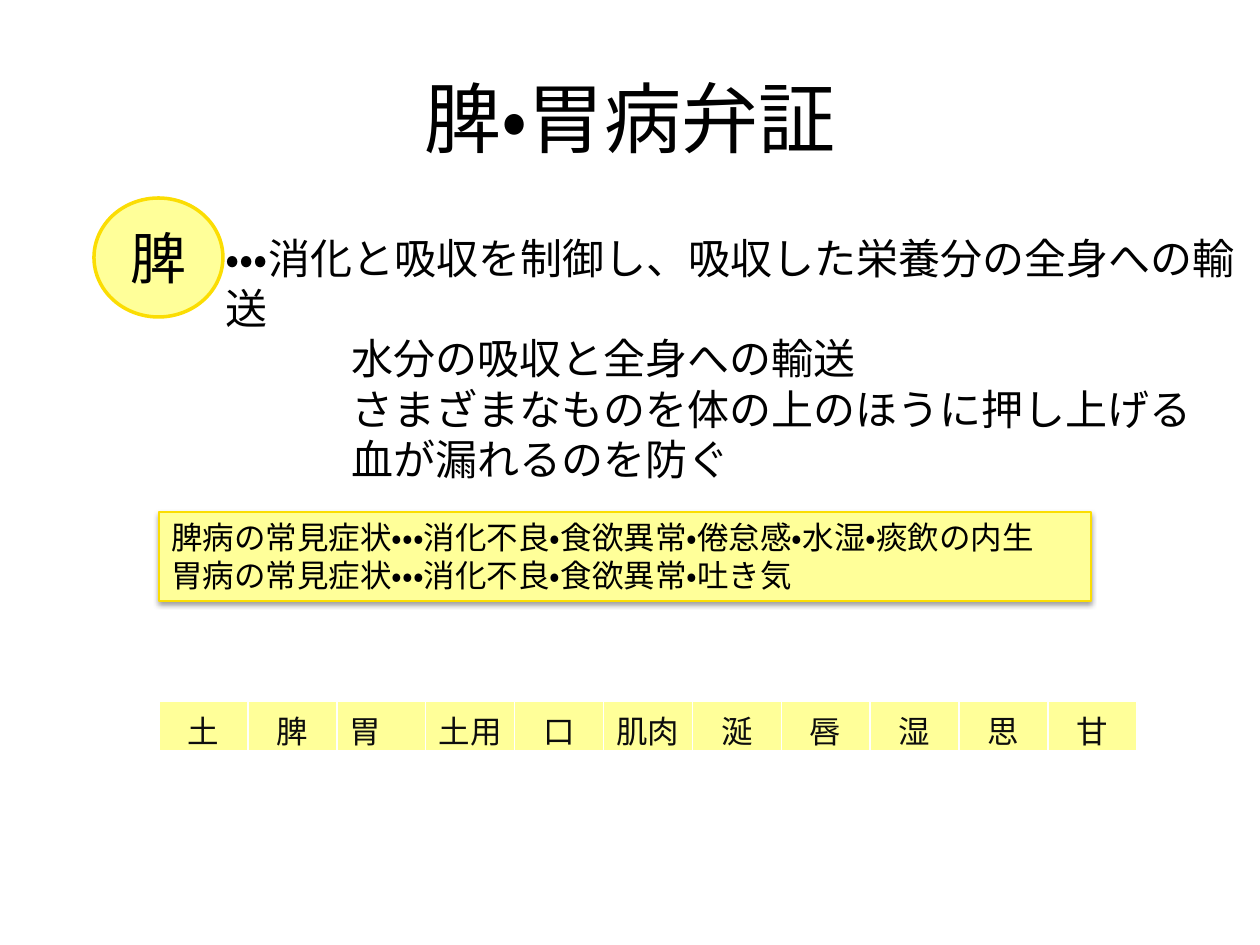
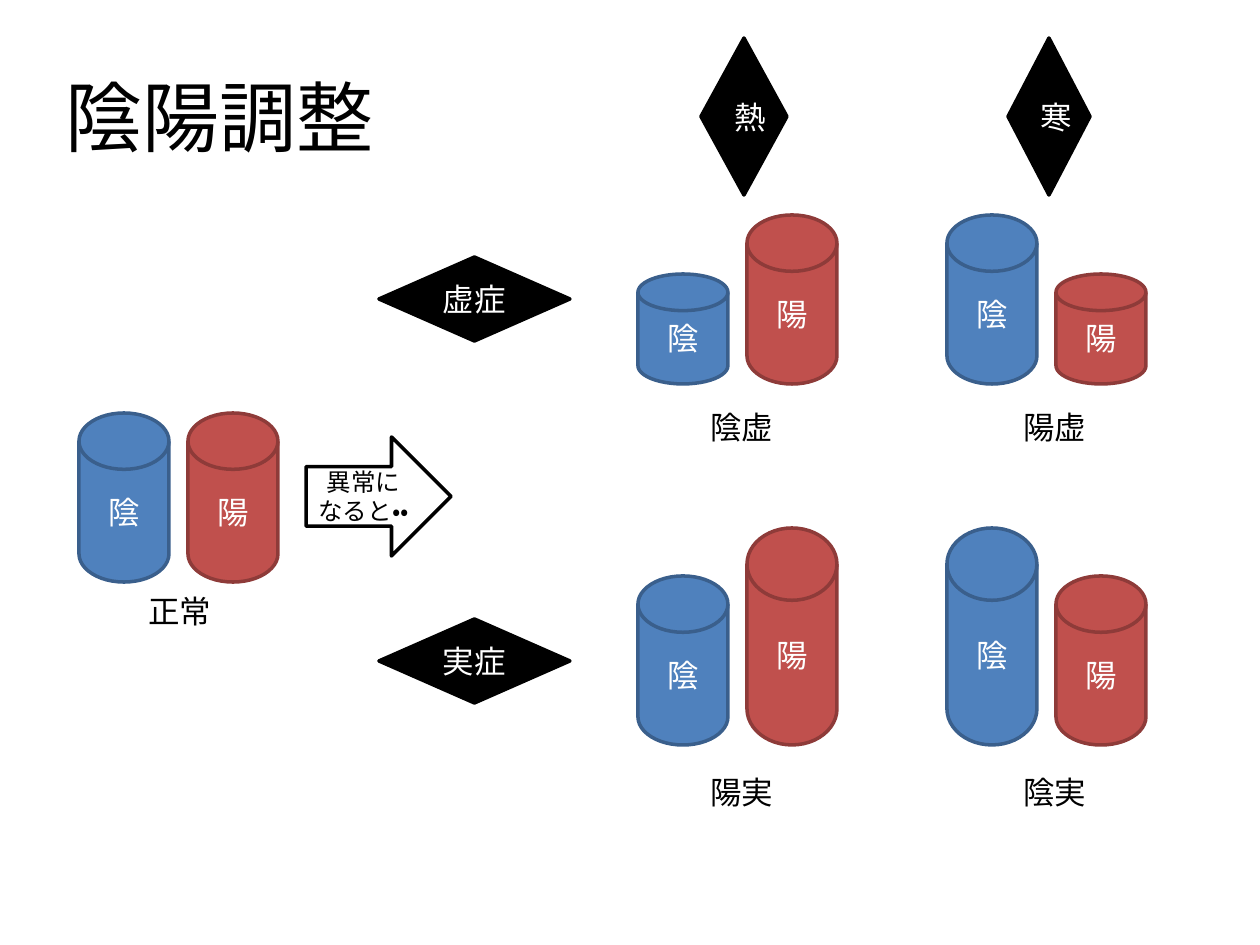
from lxml.etree import SubElement
from pptx import Presentation
from pptx.dml.color import RGBColor
from pptx.enum.lang import MSO_LANGUAGE_ID as Language
from pptx.enum.shapes import MSO_SHAPE as Shape
from pptx.enum.text import MSO_ANCHOR as Anchor, MSO_AUTO_SIZE as AutoSize, PP_ALIGN as Align
from pptx.oxml.ns import qn
from pptx.util import Pt

EMU_PER_PX = 914400 / 126
COLORS = {
    "black": "000000", "white": "FFFFFF", "ink": "0D0D0D",
    "earth": "FFFF99", "earth_line": "FBDD03",
    "yin": "4F81BD", "yin_line": "3A5F8C",
    "yang": "C0504D", "yang_line": "8E3B39",
}
DISK_WIDTH = 90
DISK_PITCH = 109


def emu(*lengths):
    return [round(length * EMU_PER_PX) for length in lengths]


def rgb(name):
    return RGBColor.from_string(COLORS[name])


class Deck:
    font = "Calibri"

    def __init__(self):
        self.presentation = Presentation()
        self.presentation.slide_width, self.presentation.slide_height = emu(1260, 945)
        self.slide = None

    def add_slide(self):
        self.slide = self.presentation.slides.add_slide(self.presentation.slide_layouts[6])

    def add_lines(self, frame, lines, size, color="black", align=Align.LEFT, indent=0):
        for index, line in enumerate(lines):
            paragraph = frame.paragraphs[0] if index == 0 else frame.add_paragraph()
            paragraph.alignment = align
            if index and indent:
                properties = paragraph._p.get_or_add_pPr()
                properties.set("marL", str(emu(indent)[0]))
                properties.set("indent", "0")
            run = paragraph.add_run()
            run.text = line
            run.font.name = self.font
            run.font.size = Pt(size)
            run.font.color.rgb = rgb(color)
            run.font.language_id = Language.JAPANESE

    def text(self, box, lines, size=18, wrap=True, indent=0):
        frame = self.slide.shapes.add_textbox(*emu(*box)).text_frame
        frame.word_wrap = wrap
        frame.auto_size = AutoSize.SHAPE_TO_FIT_TEXT
        self.add_lines(frame, lines, size, indent=indent)

    def title(self, left, top, text, align):
        frame = self.slide.shapes.add_textbox(*emu(left, top, 1134, 158)).text_frame
        frame.word_wrap = True
        frame.vertical_anchor = Anchor.MIDDLE
        self.add_lines(frame, [text], 44, align=align)

    def shape(self, kind, box, fill, line, text, size=18, color="white"):
        shape = self.slide.shapes.add_shape(kind, *emu(*box))
        shape.shadow.inherit = False
        shape.fill.solid()
        shape.fill.fore_color.rgb = rgb(fill)
        shape.line.color.rgb = rgb(line)
        shape.line.width = Pt(2)
        shape.text_frame.vertical_anchor = Anchor.MIDDLE
        self.add_lines(shape.text_frame, [text], size, color, Align.CENTER)

    def note(self, box, lines):
        shape = self.slide.shapes.add_shape(Shape.RECTANGLE, *emu(*box))
        shape.shadow.inherit = False
        shape.fill.solid()
        shape.fill.fore_color.rgb = rgb("earth")
        shape.line.color.rgb = rgb("earth_line")
        shape.line.width = Pt(0.75)
        effects = shape._element.spPr.find(qn("a:effectLst"))
        shadow = SubElement(effects, qn("a:outerShdw"), blurRad=str(Pt(3.1)),
                            dist=str(Pt(1.6)), dir="5400000", rotWithShape="0")
        shade = SubElement(shadow, qn("a:srgbClr"), val=COLORS["black"])
        SubElement(shade, qn("a:alpha"), val="38000")
        frame = shape.text_frame
        frame.word_wrap = False
        frame.auto_size = AutoSize.SHAPE_TO_FIT_TEXT
        frame.vertical_anchor = Anchor.TOP
        self.add_lines(frame, lines, 18)

    def table_row(self, box, texts, right_padding):
        table = self.slide.shapes.add_table(1, len(texts), *emu(*box)).table
        table.first_row = table.horz_banding = False
        for index, text in enumerate(texts):
            table.columns[index].width = emu(box[2] / len(texts))[0]
            cell = table.cell(0, index)
            if text in right_padding:
                cell.margin_left, cell.margin_right = emu(0, right_padding[text])
            self.add_lines(cell.text_frame, [text], 18, "ink", Align.CENTER)
            properties = cell._tc.get_or_add_tcPr()
            for side, width in (("L", 1), ("R", 1), ("T", 1), ("B", 3)):
                border = SubElement(properties, qn(f"a:ln{side}"), w=str(Pt(width)))
                fill = SubElement(border, qn("a:solidFill"))
                SubElement(fill, qn("a:srgbClr"), val=COLORS["white"])
            cell.fill.solid()
            cell.fill.fore_color.rgb = rgb("earth")

    def balance(self, left, bottom, yin_height, yang_height, label, label_box):
        disks = (("yin", "陰", yin_height), ("yang", "陽", yang_height))
        for index, (name, text, height) in enumerate(disks):
            box = (left + index * DISK_PITCH, bottom - height, DISK_WIDTH, height)
            self.shape(Shape.FLOWCHART_MAGNETIC_DISK, box, name, f"{name}_line", text)
        self.text(label_box, [label])


def spleen_slide(deck):
    deck.add_slide()
    deck.title(63, 38, "脾・胃病弁証", Align.CENTER)
    deck.shape(Shape.OVAL, (94, 198, 129, 119), "earth", "earth_line", "脾", 32, "black")
    deck.text((213, 226, 1053, 217), [
        "・・・消化と吸収を制御し、吸収した栄養分の全身への輸送",
        "水分の吸収と全身への輸送",
        "さまざまなものを体の上のほうに押し上げる",
        "血が漏れるのを防ぐ",
    ], 24, wrap=False, indent=126)
    deck.note((159, 512, 932, 89), [
        "脾病の常見症状・・・消化不良・食欲異常・倦怠感・水湿・痰飲の内生",
        "胃病の常見症状・・・消化不良・食欲異常・吐き気",
    ])
    deck.table_row((159, 701, 978, 51),
                   ["土", "脾", "胃", "土用", "口", "肌肉", "涎", "唇", "湿", "思", "甘"],
                   {"胃": 32})


def balance_slide(deck):
    deck.add_slide()
    deck.title(53, 37, "陰陽調整", Align.LEFT)
    short, normal, tall = 110, 169, 217
    deck.balance(79, 582, normal, normal, "正常", (136, 586, 105, 50))
    deck.shape(Shape.RIGHT_ARROW, (306, 437, 145, 119), "white", "black",
               "異常になると・・", 14, "black")
    deck.balance(638, 384, short, normal, "陰虚", (698, 402, 110, 50))
    deck.balance(947, 384, normal, short, "陽虚", (1011, 402, 95, 50))
    deck.balance(638, 745, normal, tall, "陽実", (698, 767, 118, 50))
    deck.balance(947, 745, tall, normal, "陰実", (1011, 767, 118, 50))
    for text, box in (
        ("虚症", (379, 257, 191, 84)), ("実症", (379, 619, 191, 84)),
        ("熱", (701, 38, 86, 157)), ("寒", (1008, 38, 82, 157)),
    ):
        deck.shape(Shape.FLOWCHART_DECISION, box, "black", "black", text)


def main():
    deck = Deck()
    spleen_slide(deck)
    balance_slide(deck)
    deck.presentation.save("out.pptx")


if __name__ == "__main__":
    main()
